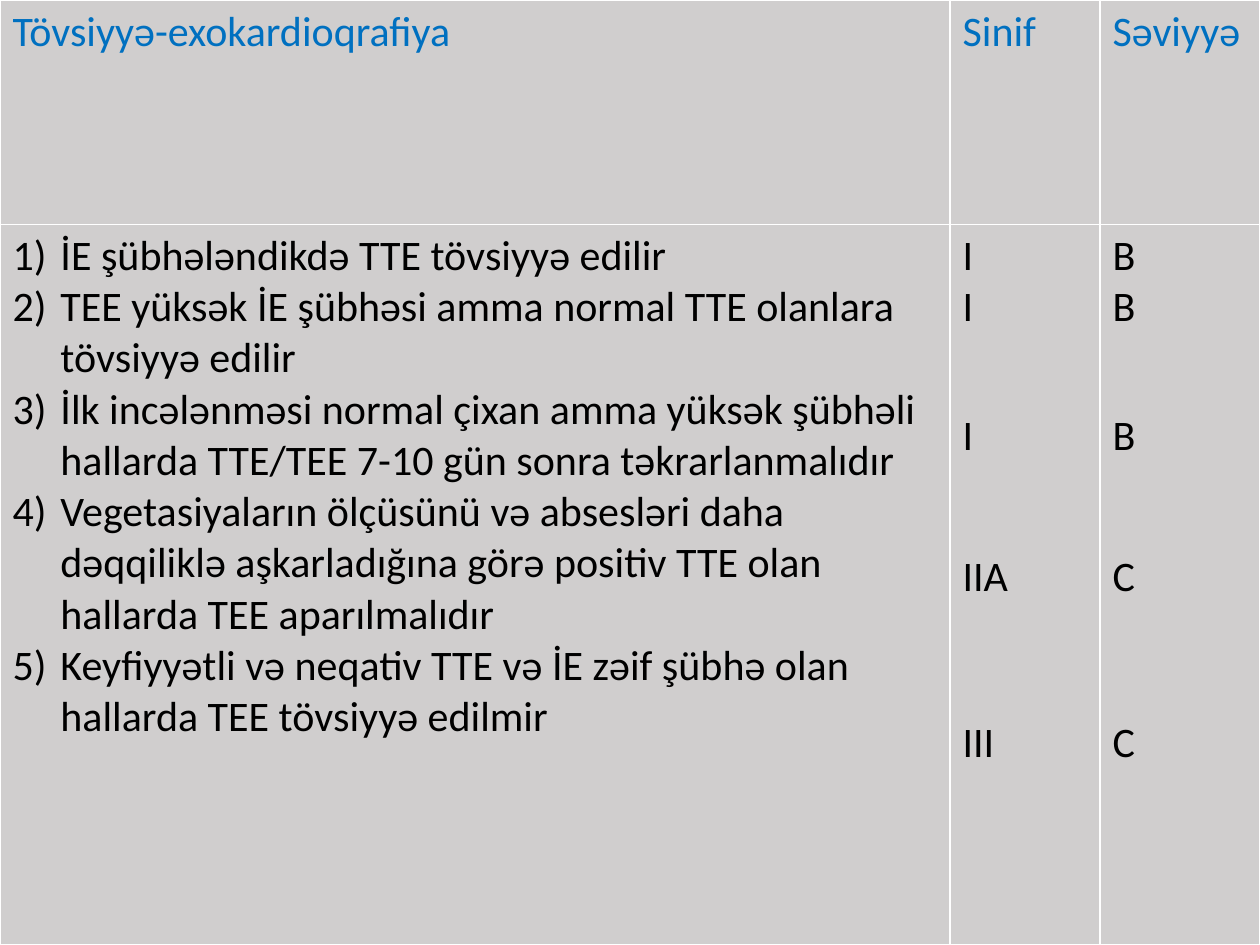
from lxml.etree import SubElement
from pptx import Presentation
from pptx.dml.color import RGBColor
from pptx.oxml import parse_xml
from pptx.oxml.ns import nsdecls, qn
from pptx.util import Inches, Pt

HEADS = ["Tövsiyyə-exokardioqrafiya", "Sinif", "Səviyyə"]
ADVICE = [
    ("İE şübhələndikdə TTE tövsiyyə edilir", "I", "B"),
    ("TEE yüksək İE şübhəsi amma normal TTE olanlara tövsiyyə edilir", "I", "B"),
    ("İlk incələnməsi normal çixan amma yüksək şübhəli hallarda TTE/TEE "
     "7-10 gün sonra təkrarlanmalıdır", "I", "B"),
    ("Vegetasiyaların ölçüsünü və absesləri daha dəqqiliklə aşkarladığına "
     "görə positiv TTE olan hallarda TEE aparılmalıdır", "IIA", "C"),
    ("Keyfiyyətli və neqativ TTE və İE zəif şübhə olan hallarda TEE "
     "tövsiyyə edilmir", "III", "C"),
]
GAPS = [0, 0, 44.4, 51.3, 65.5]
WIDTHS = [7.54, 1.19, 1.27]
HEIGHTS = [1.78, 5.72]
INDENT = Inches(0.38)
FONT = {"name": "Calibri", "size": Pt(24), "bold": False}
BLUE, BLACK, GREY, WHITE = "0070C0", "000000", "D0CECE", "FFFFFF"


def tint(part, code):
    part.rgb = RGBColor.from_string(code)


def style(para, code):
    for key, value in FONT.items():
        setattr(para.font, key, value)
    tint(para.font.color, code)


def number(para):
    props = para._p.get_or_add_pPr()
    props.set("marL", str(INDENT))
    props.set("indent", str(-INDENT))
    SubElement(props, qn("a:buFont")).set("typeface", "+mj-lt")
    SubElement(props, qn("a:buAutoNum")).set("type", "arabicParenR")


def frame(cell):
    props = cell._tc.get_or_add_tcPr()
    for spot, side in enumerate("LRTB"):
        props.insert(spot, parse_xml(
            f'<a:ln{side} {nsdecls("a")} w="{Pt(1)}"><a:solidFill>'
            f'<a:srgbClr val="{WHITE}"/></a:solidFill></a:ln{side}>'))


def write(cell, lines, code, gaps, listed=False):
    text = cell.text_frame
    for i, (line, gap) in enumerate(zip(lines, gaps)):
        para = text.add_paragraph() if i else text.paragraphs[0]
        para.text = line
        if gap:
            para.space_before = Pt(gap)
        if listed:
            number(para)
        style(para, code)
    cell.fill.solid()
    tint(cell.fill.fore_color, GREY)
    frame(cell)


deck = Presentation()
deck.slide_width, deck.slide_height = Inches(10), Inches(7.5)
slide = deck.slides.add_slide(deck.slide_layouts[6])
table = slide.shapes.add_table(
    2, 3, 0, 0, deck.slide_width, deck.slide_height).table
table.first_row = table.horz_banding = False
for row, height in zip(table.rows, HEIGHTS):
    row.height = Inches(height)
for i, (head, lines) in enumerate(zip(HEADS, zip(*ADVICE))):
    table.columns[i].width = Inches(WIDTHS[i])
    write(table.cell(0, i), [head], BLUE, [0])
    gaps = GAPS if i else [0] * len(lines)
    write(table.cell(1, i), lines, BLACK, gaps, listed=i == 0)
deck.save("out.pptx")
